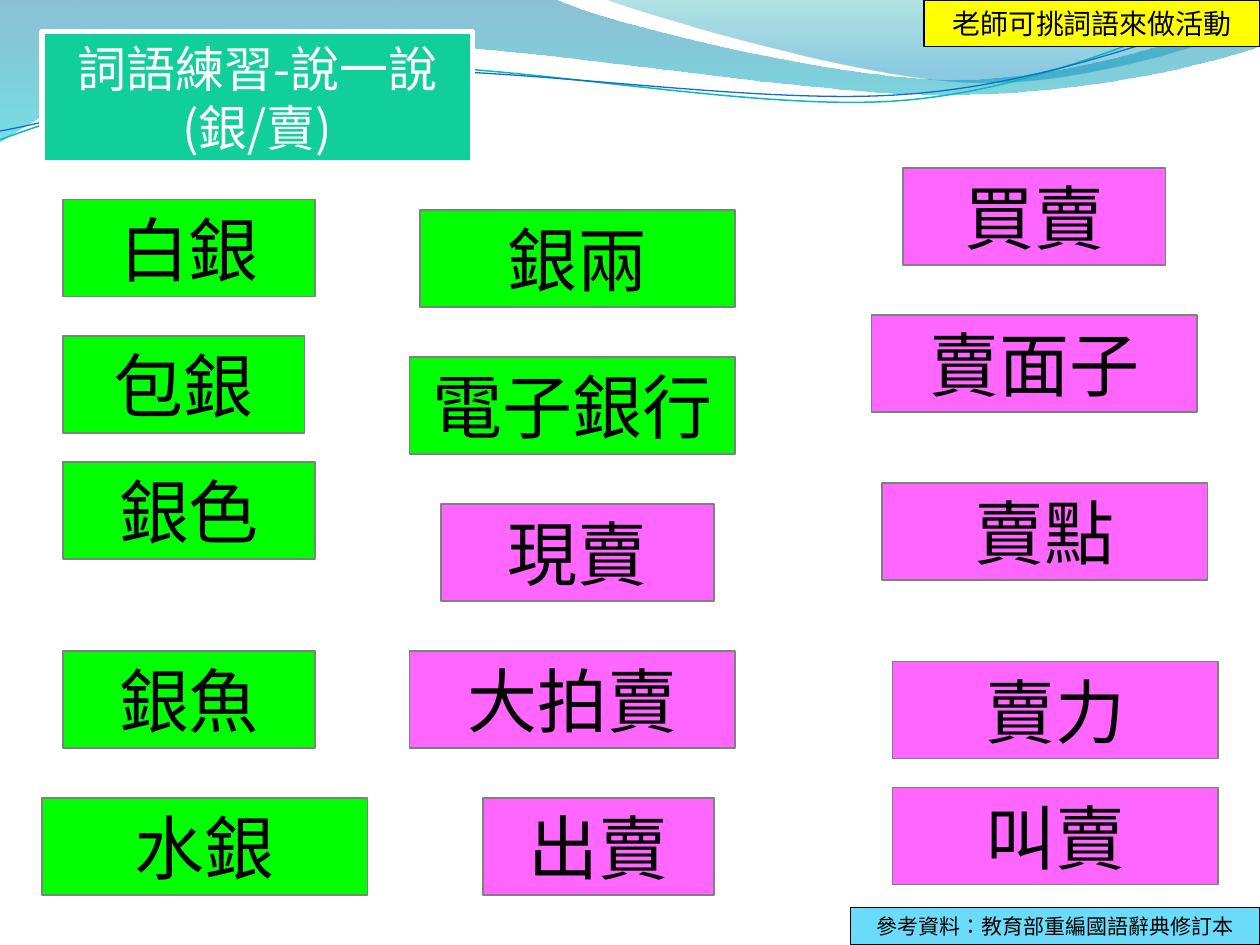
from dataclasses import dataclass
from math import cos, radians, sin
from typing import NamedTuple

from lxml.etree import SubElement
from pptx import Presentation
from pptx.dml.color import RGBColor
from pptx.enum.shapes import MSO_SHAPE
from pptx.enum.text import MSO_ANCHOR, MSO_AUTO_SIZE, PP_ALIGN
from pptx.oxml.ns import qn
from pptx.util import Inches, Pt


@dataclass(frozen=True)
class Theme:
    font: str = "Noto Sans CJK SC"
    language: str = "zh-TW"
    ink: str = "000000"
    paper: str = "FFFFFF"
    silver: str = "00FF00"
    sell: str = "FF66FF"
    card_line: str = "808080"
    title: str = "10CF9B"
    note: str = "FFFF00"
    source: str = "6BDBFA"
    card_size: int = 40
    title_size: int = 28
    note_size: int = 16
    source_size: int = 12
    thin: float = 0.75
    thick: float = 3


class Card(NamedTuple):
    """A word box: left, top and width in grid units."""
    text: str
    column: float
    row: float
    columns: float
    fill: str


class Stop(NamedTuple):
    position: float
    color: str
    opacity: int


class Wave(NamedTuple):
    """A curve: each segment holds one point (line) or three (Bezier)."""
    start: tuple
    segments: list
    stops: tuple = ()
    line: str = ""
    weight: float = 0
    turn: float = 0
    pivot: tuple = (0, 0)


THEME = Theme()
UNIT = Inches(1) // 12  # the slide is 120 columns by 90 rows
CARD_ROWS = 9.25
POINTS_PER_INCH = 10000

WAVES = [
    Wave((0, 0), [
        [(4.4, -0.01)],
        [(4.76, 0.17), (6.64, 0.63), (7.58, 0.63)],
        [(8.53, 0.63), (9.58, 0.26), (10, 0.09)],
        [(10.01, 0.36)],
        [(9.83, 0.44), (8.7, 0.76), (7.46, 0.75)],
        [(6.22, 0.75), (3.82, 0.28), (2.57, 0.34)],
        [(1.29, 0.36), (0.46, 0.83), (-0.01, 1.13)],
    ], stops=(Stop(0, "0074A1", 45), Stop(1, "00C6CF", 55))),
    Wave((4.79, -0.01), [
        [(5.09, 0.11), (6.82, 0.62), (7.69, 0.65)],
        [(8.56, 0.69), (9.61, 0.32), (10, 0.21)],
        [(10, 0)],
    ], stops=(Stop(0, "00A1A9", 30), Stop(0.8, "008BBF", 45))),
    Wave((0, 1.11), [
        [(0.48, 0.93), (1.58, 0.57), (2.77, 0.52)],
        [(3.95, 0.47), (5.93, 0.89), (7.13, 0.8)],
        [(8.33, 0.71), (9.38, 0.15), (9.98, -0.02)],
    ], line="0AB8BF", weight=0.85, turn=-2.7, pivot=(4.99, 0.58)),
    Wave((0, 1.04), [
        [(0.47, 0.96), (1.64, 0.61), (2.83, 0.56)],
        [(4.03, 0.51), (5.97, 0.84), (7.17, 0.75)],
        [(8.36, 0.67), (9.41, 0.21), (10, 0.06)],
    ], line="0F6FC6", weight=0.75, turn=-2.7, pivot=(5, 0.59)),
]

CARDS = [
    # Left column
    Card("白銀", 6, 19, 24, THEME.silver),
    Card("包銀", 6, 32, 23, THEME.silver),
    Card("銀色", 6, 44, 24, THEME.silver),
    Card("銀魚", 6, 62, 24, THEME.silver),
    Card("水銀", 4, 76, 31, THEME.silver),
    # Middle column
    Card("銀兩", 40, 20, 30, THEME.silver),
    Card("電子銀行", 39, 34, 31, THEME.silver),
    Card("現賣", 42, 48, 26, THEME.sell),
    Card("大拍賣", 39, 62, 31, THEME.sell),
    Card("出賣", 46, 76, 22, THEME.sell),
    # Right column
    Card("買賣", 86, 16, 25, THEME.sell),
    Card("賣面子", 83, 30, 31, THEME.sell),
    Card("賣點", 84, 46, 31, THEME.sell),
    Card("賣力", 85, 63, 31, THEME.sell),
    Card("叫賣", 85, 75, 31, THEME.sell),
]


def rgb(color: str) -> RGBColor:
    return RGBColor.from_string(color)


def grid(*lengths: float) -> list[int]:
    return [round(length * UNIT) for length in lengths]


def level(point: tuple, wave: Wave) -> tuple:
    """Turn a point back, so that the shape's own rotation puts it in place."""
    angle = radians(-wave.turn)
    x, y = point[0] - wave.pivot[0], point[1] - wave.pivot[1]
    turned = (wave.pivot[0] + x * cos(angle) - y * sin(angle),
              wave.pivot[1] + x * sin(angle) + y * cos(angle))
    return tuple(round(value * POINTS_PER_INCH) for value in turned)


def bend(shape, wave: Wave) -> None:
    """Join each three straight steps of a Bezier segment into one curve."""
    steps = iter(list(shape.element.spPr.iter(qn("a:lnTo"))))
    for segment in wave.segments:
        lines = [next(steps) for _ in segment]
        if len(lines) == 3:
            curve = SubElement(lines[0].getparent(), qn("a:cubicBezTo"))
            lines[0].addprevious(curve)
            for line in lines:
                curve.append(line[0])
                line.getparent().remove(line)


def draw_wave(page, wave: Wave) -> None:
    builder = page.shapes.build_freeform(*level(wave.start, wave),
                                         scale=Inches(1) / POINTS_PER_INCH)
    points = [level(point, wave) for segment in wave.segments for point in segment]
    builder.add_line_segments(points, close=bool(wave.stops))
    shape = builder.convert_to_shape()
    bend(shape, wave)
    shape.rotation = wave.turn
    shape.shadow.inherit = False
    if not wave.stops:
        shape.fill.background()
        shape.line.color.rgb = rgb(wave.line)
        shape.line.width = Pt(wave.weight)
        return
    shape.line.fill.background()
    shape.fill.gradient()
    shape.fill.gradient_angle = 270
    for target, stop in zip(shape.fill.gradient_stops, wave.stops):
        target.position = stop.position
        target.color.rgb = rgb(stop.color)
    for color, stop in zip(shape.element.spPr.iter(qn("a:srgbClr")), wave.stops):
        SubElement(color, qn("a:alpha"), val=str(stop.opacity * 1000))


def write_text(box, text: str, *, size: int, color: str = THEME.ink) -> None:
    frame = box.text_frame
    frame.word_wrap = True
    frame.auto_size = MSO_AUTO_SIZE.NONE
    frame.vertical_anchor = MSO_ANCHOR.MIDDLE
    para = frame.paragraphs[0]
    para.alignment = PP_ALIGN.CENTER
    span = para.add_run()
    span.text = text
    span.font.size = Pt(size)
    span.font.name = THEME.font
    span.font.color.rgb = rgb(color)
    span.font._element.set("lang", THEME.language)
    SubElement(span.font._element, qn("a:ea"), typeface=THEME.font)


def paint(box, fill: str, line: str, weight: float) -> None:
    box.fill.solid()
    box.fill.fore_color.rgb = rgb(fill)
    box.line.color.rgb = rgb(line)
    box.line.width = Pt(weight)


def draw_box(page, card: Card, *, rows: float = CARD_ROWS, size: int = THEME.card_size,
             line: str = THEME.card_line) -> None:
    box = page.shapes.add_shape(MSO_SHAPE.RECTANGLE,
                                *grid(card.column, card.row, card.columns, rows))
    box.shadow.inherit = False
    paint(box, card.fill, line, THEME.thin)
    write_text(box, card.text, size=size)


def draw_title(page, text: str) -> None:
    box = page.shapes.title
    box.left, box.top, box.width, box.height = grid(4, 3, 41, 12.5)
    paint(box, THEME.title, THEME.paper, THEME.thick)
    write_text(box, text, size=THEME.title_size, color=THEME.paper)


def main() -> None:
    deck = Presentation()
    deck.slide_width, deck.slide_height = Inches(10), Inches(7.5)
    page = deck.slides.add_slide(deck.slide_layouts[5])

    # Waves along the top, kept behind the title
    for wave in WAVES:
        draw_wave(page, wave)
    title = page.shapes.title.element
    title.getparent().append(title)
    draw_title(page, "詞語練習-說一說(銀/賣)")

    # Word cards, then the teacher's note and the source
    for card in CARDS:
        draw_box(page, card)
    draw_box(page, Card("老師可挑詞語來做活動", 88, 0, 32, THEME.note),
             rows=4.45, size=THEME.note_size, line=THEME.ink)
    draw_box(page, Card("參考資料：教育部重編國語辭典修訂本", 81, 86.4, 39, THEME.source),
             rows=3.6, size=THEME.source_size, line=THEME.ink)
    deck.save("out.pptx")


if __name__ == "__main__":
    main()
